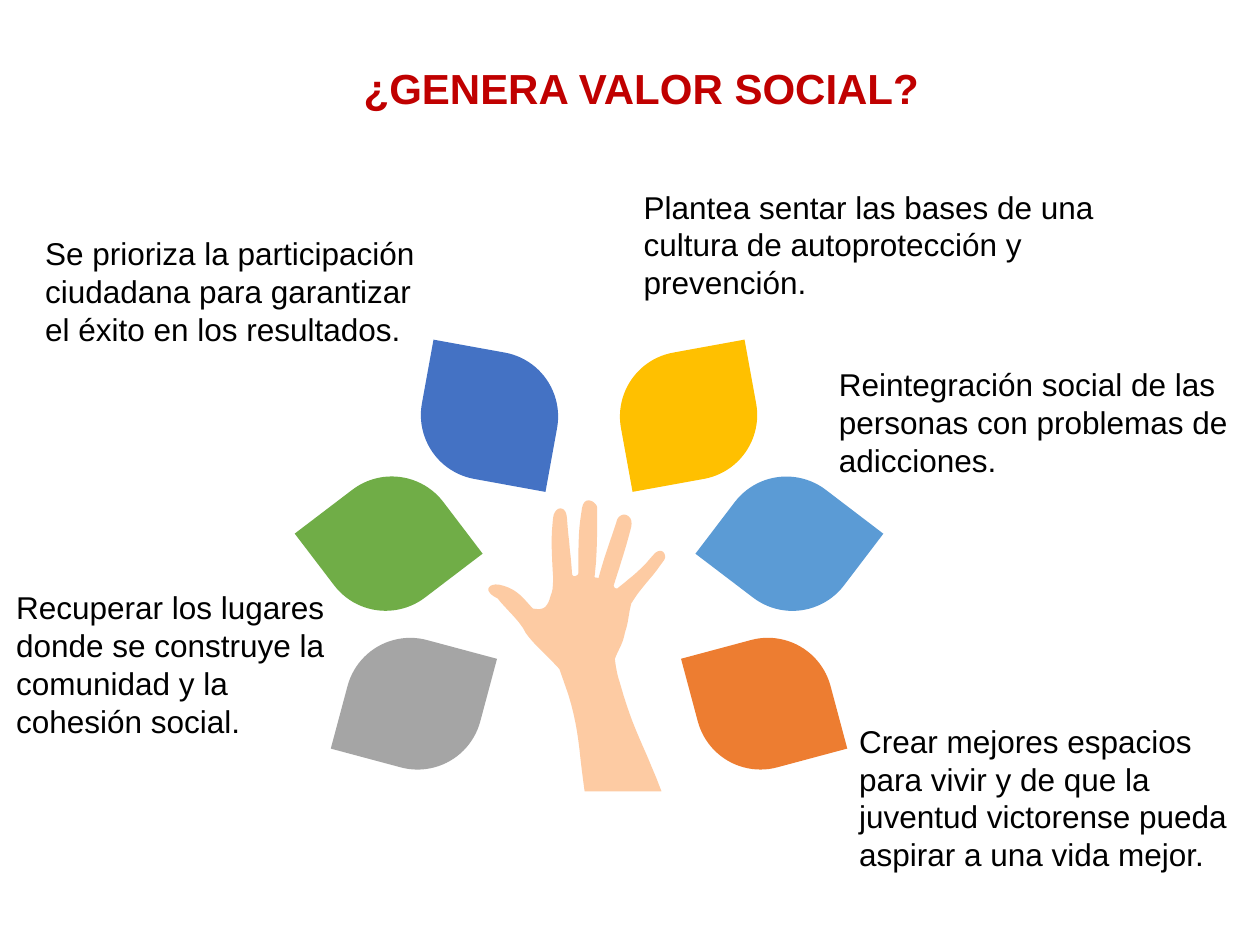
from dataclasses import dataclass

import pptx
import pptx.dml.color
import pptx.enum.shapes
import pptx.enum.text
import pptx.util

CELL = pptx.util.Inches(0.1)  # the slide is a grid of 100 columns by 75 rows
COLS, ROWS = 100, 75
AXIS = 46.75  # column about which the leaves mirror
FINE = 100  # outline steps per cell
STEPS = 10  # points drawn on each curve


@dataclass(frozen=True)
class Theme:
    font: str = "Arial"
    head: int = 24
    body: int = 18
    red: str = "C00000"
    ink: str = "000000"
    skin: str = "FDCBA3"


@dataclass(frozen=True)
class Leaf:
    gap: float  # columns from the axis to the centre
    row: float
    wide: float
    high: float
    turn: float
    right: str
    left: str


@dataclass(frozen=True)
class Note:
    col: float
    row: float
    wide: float
    high: float
    text: str


THEME = Theme()

LEAVES = [
    Leaf(7.9, 33.0, 10.9, 10.3, -10.3, "FFC000", "4472C4"),
    Leaf(15.9, 43.15, 10.9, 10.3, 37.3, "5B9BD5", "70AD47"),
    Leaf(13.9, 55.85, 10.3, 10.9, 75, "ED7D31", "A5A5A5"),
]

TITLE = Note(13.9, 4.5, 74, 9.1, "¿GENERA VALOR SOCIAL?")

NOTES = [
    Note(2.6, 18.1, 32.7, 10.1, "Se prioriza la participación ciudadana para "
         "garantizar el éxito en los resultados."),
    Note(50.1, 14.4, 38.8, 10.1, "Plantea sentar las bases de una cultura de "
         "autoprotección y prevención."),
    Note(67.2, 56.8, 32.8, 13.1, "Crear mejores espacios para vivir y de que la "
         "juventud victorense pueda aspirar a una vida mejor."),
    Note(0.3, 46.2, 29.4, 13.1, "Recuperar los lugares donde se construye la "
         "comunidad y la cohesión social."),
    Note(65.6, 28.5, 34.6, 10.1, "Reintegración social de las personas con "
         "problemas de adicciones."),
]

# Hand outline in cells: a pair is a line, three pairs are a Bézier curve.
START = (46.4, 62.8)
HAND = [
    (52.5, 62.8),
    (51.1, 59.1, 50.3, 58.1, 49.2, 54.2),
    (49, 53.6, 48.9, 53.1, 48.8, 52.3),
    (49.1, 51.5, 49.4, 51.2, 49.6, 50.2),
    (49.9, 49.3, 49.8, 49.2, 50.1, 47.9),
    (50.8, 46.7, 51.8, 45.8, 52.6, 44.6),
    (53.1, 44.1, 52.5, 43.2, 51.8, 44.1),
    (51, 45.1, 50, 45.9, 49, 46.7),
    (48.7, 46.7, 48.8, 46.6, 48.7, 46.5),
    (49.2, 44.9, 49.7, 43.4, 50.1, 41.8),
    (50.3, 40.9, 49.4, 40.5, 49, 41.2),
    (48.5, 42.8, 48, 44, 47.5, 45.9),
    (47.4, 45.8, 47.1, 45.9, 47.2, 45.7),
    (47.4, 44, 47.4, 42.1, 47.4, 40.3),
    (47.4, 39.9, 46.4, 39.2, 46.2, 40.3),
    (45.9, 42.1, 45.9, 43.2, 45.9, 45.5),
    (45.9, 45.7, 45.4, 45.9, 45.4, 45.5),
    (45.3, 44, 45.1, 42.6, 45, 41.1),
    (44.9, 40, 44, 40.2, 43.9, 41.1),
    (43.7, 42.9, 43.8, 44.1, 43.9, 45.8),
    (43.9, 46.4, 43.9, 46.8, 43.7, 47.3),
    (43.4, 48.4, 43, 48.4, 42.3, 48.3),
    (41.6, 47.6, 41.1, 46.7, 39.6, 46.4),
    (38.6, 46.3, 38.4, 47, 39.5, 47.5),
    (40.2, 48.4, 41.3, 49.3, 41.7, 50.2),
    (42.4, 51.2, 43.8, 52.4, 44.4, 53.1),
    (45.1, 55.1),
    (46, 58, 45.9, 59.4, 46.4, 62.8),
]


def cells(*sizes: float) -> list[int]:
    return [round(size * CELL) for size in sizes]


def color(code: str) -> pptx.dml.color.RGBColor:
    return pptx.dml.color.RGBColor.from_string(code)


def paint(shape, code: str) -> None:
    shape.shadow.inherit = False
    shape.fill.solid()
    shape.fill.fore_color.rgb = color(code)
    shape.line.fill.background()


def trace() -> list[tuple[float, float]]:
    """Return the hand outline as points, with its curves flattened."""
    dots = [START]
    for part in HAND:
        if len(part) == 2:
            dots.append(part)
            continue
        knots = [dots[-1], part[:2], part[2:4], part[4:]]
        for step in range(1, STEPS + 1):
            t = step / STEPS
            s = 1 - t
            mix = (s**3, 3 * s * s * t, 3 * s * t * t, t**3)
            dots.append(tuple(sum(m * k[i] for m, k in zip(mix, knots))
                              for i in (0, 1)))
    return dots


def draw_hand(slide) -> None:
    dots = [(x * FINE, y * FINE) for x, y in trace()]
    pen = slide.shapes.build_freeform(*dots[0], scale=CELL / FINE)
    pen.add_line_segments(dots[1:], close=True)
    paint(pen.convert_to_shape(), THEME.skin)


def draw_leaf(slide, leaf: Leaf, side: int) -> None:
    """Draw a leaf right (1) or left (-1) of the axis."""
    col = AXIS + side * leaf.gap - leaf.wide / 2
    shape = slide.shapes.add_shape(
        pptx.enum.shapes.MSO_SHAPE.ROUND_2_DIAG_RECTANGLE,
        *cells(col, leaf.row - leaf.high / 2, leaf.wide, leaf.high))
    shape.rotation = side * leaf.turn
    round_at = 0 if side > 0 else 1
    shape.adjustments[round_at] = 0.5
    shape.adjustments[1 - round_at] = 0
    paint(shape, leaf.right if side > 0 else leaf.left)


def draw_note(slide, note: Note, size: int, ink: str, head: bool = False) -> None:
    box = slide.shapes.add_textbox(
        *cells(note.col, note.row, note.wide, note.high))
    box.text_frame.word_wrap = True
    para = box.text_frame.paragraphs[0]
    para.text = note.text
    if head:
        para.alignment = pptx.enum.text.PP_ALIGN.CENTER
    para.font.name = THEME.font
    para.font.size = pptx.util.Pt(size)
    para.font.bold = head
    para.font.color.rgb = color(ink)


def main() -> None:
    deck = pptx.Presentation()
    deck.slide_width, deck.slide_height = cells(COLS, ROWS)
    slide = deck.slides.add_slide(deck.slide_layouts[6])
    draw_hand(slide)
    for side in (1, -1):
        for leaf in LEAVES:
            draw_leaf(slide, leaf, side)
    draw_note(slide, TITLE, THEME.head, THEME.red, head=True)
    for note in NOTES:
        draw_note(slide, note, THEME.body, THEME.ink)
    deck.save("out.pptx")


if __name__ == "__main__":
    main()
